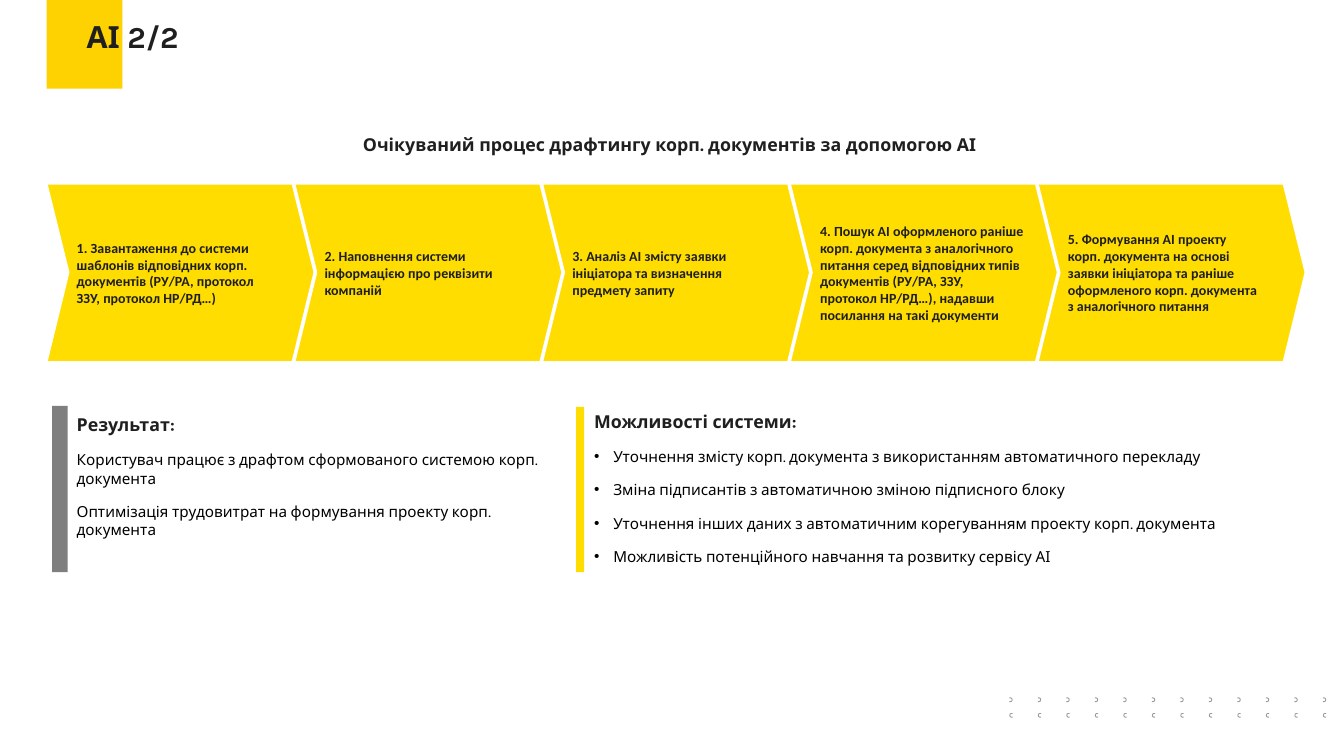
from dataclasses import dataclass

from lxml.etree import SubElement
from pptx import Presentation
from pptx.dml.color import RGBColor as RGB
from pptx.enum.shapes import MSO_SHAPE as Shape
from pptx.enum.text import MSO_ANCHOR as Anchor, PP_ALIGN as Align
from pptx.oxml.ns import qn
from pptx.util import Pt

# Content
TITLE = "АІ 2/2"
PROCESS_HEADING = "Очікуваний процес драфтингу корп. документів за допомогою АІ"
STEPS = [
    ["1. Завантаження до системи", "шаблонів відповідних корп.",
     "документів (РУ/РА, протокол", "ЗЗУ, протокол НР/РД…)"],
    ["2. Наповнення системи", "інформацією про реквізити", "компаній"],
    ["3. Аналіз АІ змісту заявки", "ініціатора та визначення", "предмету запиту"],
    ["4. Пошук АІ оформленого раніше", "корп. документа з аналогічного",
     "питання серед відповідних типів", "документів (РУ/РА, ЗЗУ,",
     "протокол НР/РД…), надавши", "посилання на такі документи"],
    ["5. Формування АІ проекту", "корп. документа на основі",
     "заявки ініціатора та раніше", "оформленого корп. документа",
     "з аналогічного питання"],
]
RESULT_HEADING = "Результат:"
RESULTS = [
    "Користувач працює з драфтом сформованого системою корп. документа",
    "Оптимізація трудовитрат на формування проекту корп. документа",
]
FEATURES_HEADING = "Можливості системи:"
FEATURES = [
    "Уточнення змісту корп. документа з використанням автоматичного перекладу",
    "Зміна підписантів з автоматичною зміною підписного блоку",
    "Уточнення інших даних з автоматичним корегуванням проекту корп. документа",
    "Можливість потенційного навчання та розвитку сервісу АІ",
]


@dataclass(frozen=True)
class Theme:
    gold: RGB = RGB(0xFE, 0xD1, 0x00)
    yellow: RGB = RGB(0xFF, 0xDD, 0x00)
    gray: RGB = RGB(0x7F, 0x7F, 0x7F)
    ornament: RGB = RGB(0x9B, 0x9B, 0x9A)
    ink: RGB = RGB(0x1F, 0x1F, 0x1F)
    black: RGB = RGB(0, 0, 0)
    white: RGB = RGB(0xFF, 0xFF, 0xFF)
    main_font: str = "Karla"
    step_font: str = "Calibri"
    title_size: int = 24
    heading_size: int = 14
    body_size: int = 12
    step_size: int = 11
    body_gap: int = 12


THEME = Theme()

# Geometry: 100 px to the inch
PX = 9144
STEP_LEFT, STEP_TOP, STEP_PITCH = 51, 201, 271
STEP_WIDTH, STEP_HEIGHT, STEP_POINT = 293, 195, 24
STEP_INSETS, STEP_INDENT = (13, 7), 20
BULLET_INDENT = 21
ARC_COLUMNS, ARC_LEFT, ARC_SPAN = 12, 1104, 343
ARC_TOP, ARC_ROW_PITCH = 763, 17
# Half ring, in tenths of a px
ARC_WIDTH = 35
ARC = [(0, 0), (15, 0), (26, 4), (33, 13), (35, 25), (33, 37), (26, 46), (15, 50),
       (0, 50), (0, 40), (15, 40), (25, 33), (25, 17), (15, 10), (0, 10)]

deck = Presentation()
deck.slide_width, deck.slide_height = 1470 * PX, 827 * PX
slide = deck.slides.add_slide(deck.slide_layouts[6])


def paint(shape, color):
    shape.shadow.inherit = False
    shape.fill.solid()
    shape.fill.fore_color.rgb = color
    shape.line.fill.background()
    return shape


def add_bar(left, top, width, height, color):
    box = (n * PX for n in (left, top, width, height))
    paint(slide.shapes.add_shape(Shape.RECTANGLE, *box), color)


def add_outline(points, left, top, color, unit=PX):
    builder = slide.shapes.build_freeform(*points[0], scale=unit)
    builder.add_line_segments(points[1:], close=True)
    return paint(builder.convert_to_shape(round(left * PX), round(top * PX)), color)


def style(paragraph, size, color=THEME.ink, bold=True, font=THEME.main_font):
    paragraph.font.name = font
    paragraph.font.size = Pt(size)
    paragraph.font.bold = bold
    paragraph.font.color.rgb = color


def indent(paragraph, left, first=0):
    props = paragraph._p.get_or_add_pPr()
    props.set("marL", str(left * PX))
    props.set("indent", str(first * PX))
    return props


def add_text(left, top, width, height, lines):
    box = slide.shapes.add_textbox(*(n * PX for n in (left, top, width, height)))
    box.text_frame.word_wrap = True
    box.text_frame.text = "\n".join(lines)
    return box.text_frame.paragraphs


def add_section(left, top, width, height, heading, items, bulleted=False):
    head, *body = add_text(left, top, width, height, [heading, *items])
    style(head, THEME.heading_size)
    for item in body:
        if bulleted:
            props = indent(item, BULLET_INDENT, -BULLET_INDENT)
            SubElement(props, qn("a:buFont"), typeface="Arial")
            SubElement(props, qn("a:buChar"), char="•")
        style(item, THEME.body_size, THEME.black, bold=False)
    for paragraph in (head, *body):
        paragraph.space_after = Pt(THEME.body_gap)


# Corner block and rows of half rings
add_bar(51, 0, 83, 97, THEME.gold)
mirrored_arc = [(ARC_WIDTH - x, y) for x, y in ARC]
for row, arc in enumerate((ARC, mirrored_arc)):
    for column in range(ARC_COLUMNS):
        arc_left = ARC_LEFT + ARC_SPAN * column / (ARC_COLUMNS - 1)
        add_outline(arc, arc_left, ARC_TOP + row * ARC_ROW_PITCH, THEME.ornament, PX / 10)

# Process steps
shoulder, middle = STEP_WIDTH - STEP_POINT, STEP_HEIGHT // 2
chevron = [(0, 0), (shoulder, 0), (STEP_WIDTH, middle), (shoulder, STEP_HEIGHT),
           (0, STEP_HEIGHT), (STEP_POINT, middle)]
for index, lines in enumerate(STEPS):
    step = add_outline(chevron, STEP_LEFT + index * STEP_PITCH, STEP_TOP, THEME.yellow)
    step.line.color.rgb = THEME.white
    step.line.width = Pt(1.5)
    frame = step.text_frame
    frame.word_wrap = True
    frame.vertical_anchor = Anchor.MIDDLE
    frame.margin_left = frame.margin_right = STEP_INSETS[0] * PX
    frame.margin_top = frame.margin_bottom = STEP_INSETS[1] * PX
    frame.text = "\n".join(lines)
    for line in frame.paragraphs:
        indent(line, STEP_INDENT)
        line.alignment = Align.LEFT
        style(line, THEME.step_size, font=THEME.step_font)

# Headings
process_heading = add_text(365, 141, 735, 34, [PROCESS_HEADING])[0]
process_heading.alignment = Align.CENTER
style(process_heading, THEME.heading_size)
style(add_text(85, 15, 1385, 50, [TITLE])[0], THEME.title_size)

# Result and features
add_section(74, 448, 555, 181, RESULT_HEADING, RESULTS)
add_bar(57, 444, 17, 182, THEME.gray)
add_section(640, 444, 804, 182, FEATURES_HEADING, FEATURES, bulleted=True)
add_bar(630, 445, 9, 181, THEME.yellow)

deck.save("out.pptx")
